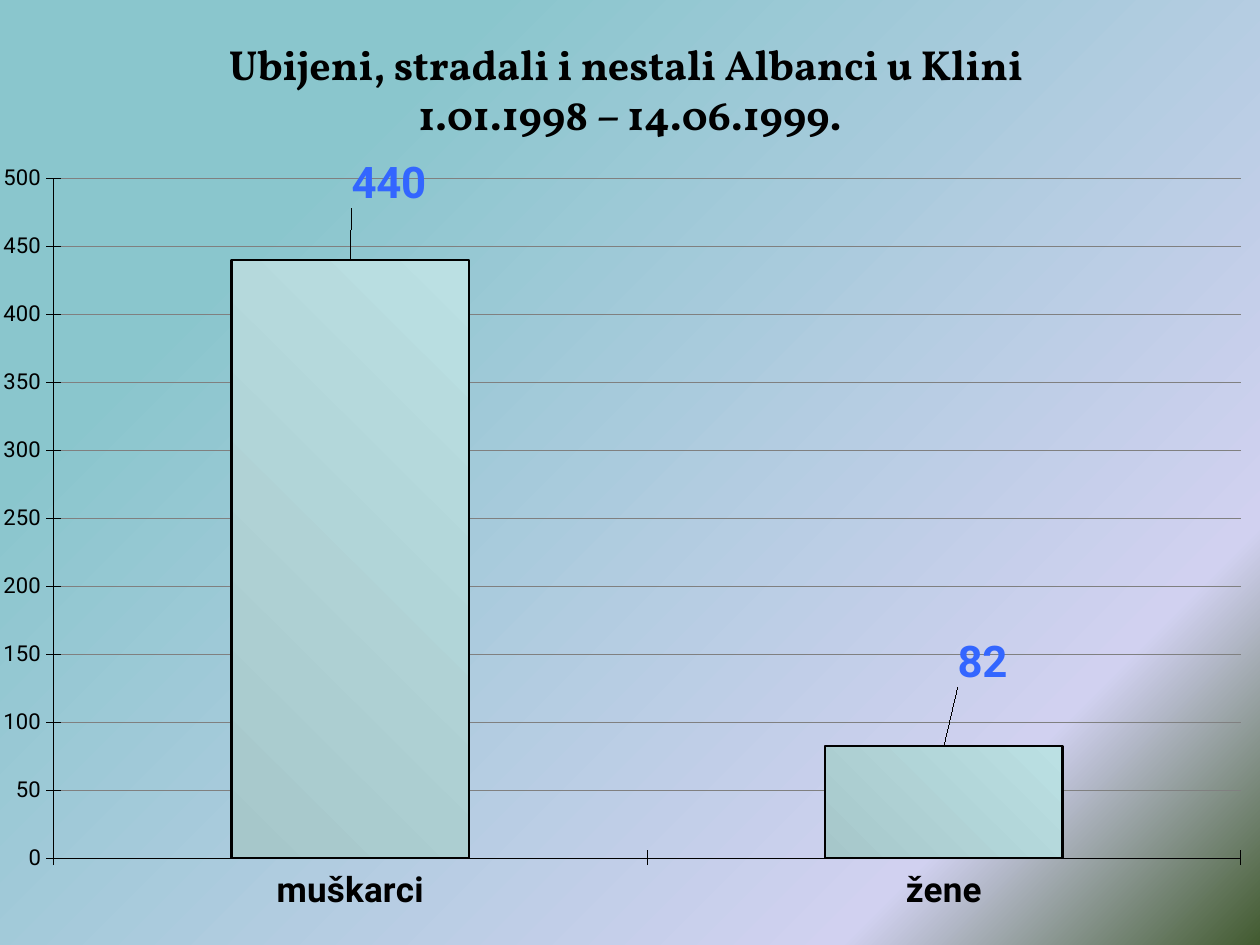
"""Build the slide with a column chart of victims in Klina by sex."""
from dataclasses import dataclass

from lxml import etree
from pptx import Presentation
from pptx.chart.data import CategoryChartData
from pptx.dml.color import RGBColor
from pptx.enum.chart import XL_CHART_TYPE, XL_LABEL_POSITION, XL_TICK_LABEL_POSITION, XL_TICK_MARK
from pptx.enum.text import MSO_ANCHOR, MSO_AUTO_SIZE, PP_ALIGN
from pptx.oxml.ns import qn
from pptx.util import Cm, Pt

COLUMNS = XL_CHART_TYPE.COLUMN_CLUSTERED
OUTSIDE_END = XL_LABEL_POSITION.OUTSIDE_END
LOW = XL_TICK_LABEL_POSITION.LOW
CROSS = XL_TICK_MARK.CROSS
TOP = MSO_ANCHOR.TOP
NO_FIT = MSO_AUTO_SIZE.NONE
CENTER = PP_ALIGN.CENTER

COLORS = {
    "text": "000000",
    "label": "3366FF",
    "grid": "808080",
    "teal": "8AC6CD",
    "lilac": "D1D1F0",
    "green": "425B30",
    "bar dark": "A6C7CA",
    "bar light": "BBE0E3",
}
CHART_FONT = "Roboto"
TITLE_FONT = "Vollkorn"
TITLE_LINES = ("Ubijeni, stradali i nestali Albanci u Klini ", "1.01.1998 – 14.06.1999.")


@dataclass(frozen=True)
class Column:
    category: str
    value: int
    label_shift: tuple[float, float]


@dataclass(frozen=True)
class Stop:
    percent: int
    color: str


GROUPS = (
    Column("muškarci", 440, (0.03, -0.06)),
    Column("žene", 82, (0.03, -0.07)),
)
PAGE_STOPS = (Stop(22, "teal"), Stop(81, "lilac"), Stop(100, "green"))
BAR_STOPS = (Stop(0, "bar dark"), Stop(100, "bar light"))


def color(name: str) -> RGBColor:
    """Return a palette colour."""
    return RGBColor.from_string(COLORS[name])


def style_font(font, size: float, bold: bool, name: str = CHART_FONT, tint: str = "text") -> None:
    """Set face, size, weight and colour of a font."""
    font.name, font.size, font.bold = name, Pt(size), bold
    font.color.rgb = color(tint)


def style_line(line, tint: str, width: float) -> None:
    """Set colour and width of a line."""
    line.color.rgb = color(tint)
    line.width = Pt(width)


def fill_gradient(fill, owner, stops: tuple[Stop, ...], angle: int) -> None:
    """Give a fill a linear gradient at a counter-clockwise angle."""
    fill.gradient()
    fill.gradient_angle = angle
    stop_list = owner.find(".//" + qn("a:gsLst"))
    for old in list(stop_list):
        stop_list.remove(old)
    for stop in stops:
        node = etree.SubElement(stop_list, qn("a:gs"), pos=str(stop.percent * 1000))
        etree.SubElement(node, qn("a:srgbClr"), val=COLORS[stop.color])


def place(parent, index: int, **settings) -> None:
    """Put a manual layout into a chart element."""
    for old in parent.findall(qn("c:layout")):
        parent.remove(old)
    layout = etree.Element(qn("c:layout"))
    manual = etree.SubElement(layout, qn("c:manualLayout"))
    for tag, value in settings.items():
        etree.SubElement(manual, qn("c:" + tag), val=str(value))
    parent.insert(index, layout)


def style_axis(axis, size: float, bold: bool) -> None:
    """Format the line, ticks and labels of an axis."""
    axis.major_tick_mark = CROSS
    style_line(axis.format.line, "text", 0.31)
    style_font(axis.tick_labels.font, size, bold)


def add_title(page) -> None:
    """Fill the title placeholder."""
    title = page.shapes.title
    title.left, title.top, title.width, title.height = Cm(0), Cm(0.64), Cm(25.4), Cm(3.18)
    frame = title.text_frame
    frame.word_wrap = True
    frame.auto_size = NO_FIT
    frame.vertical_anchor = TOP
    para = frame.paragraphs[0]
    para.alignment = CENTER
    for number, line in enumerate(TITLE_LINES):
        if number:
            para.add_line_break()
        span = para.add_run()
        span.text = line
        style_font(span.font, 24, True, TITLE_FONT)


def add_columns(page) -> None:
    """Add the column chart behind the title."""
    data = CategoryChartData()
    data.categories = [group.category for group in GROUPS]
    data.add_series("Series 1", [group.value for group in GROUPS])
    frame = page.shapes.add_chart(COLUMNS, Cm(-0.53), Cm(3.18), Cm(25.93), Cm(15.57), data)
    page.shapes.title.element.addprevious(frame.element)
    chart = frame.chart
    chart.has_title = chart.has_legend = False
    style_font(chart.font, 23.3, True)
    place(chart.element.find(".//" + qn("c:plotArea")), 0, layoutTarget="inner",
          xMode="edge", yMode="edge", x=0.062, y=0.021, w=0.923, h=0.885)

    style_axis(chart.category_axis, 20, True)
    chart.category_axis.tick_label_position = LOW
    values = chart.value_axis
    style_axis(values, 12.6, False)
    values.minimum_scale, values.maximum_scale, values.major_unit = 0, 500, 50
    style_line(values.major_gridlines.format.line, "grid", 0.31)

    plot = chart.plots[0]
    plot.gap_width = 150
    plot.vary_by_categories = False
    series = plot.series[0]
    fill_gradient(series.format.fill, chart.element, BAR_STOPS, 45)
    style_line(series.format.line, "text", 1.25)
    series.data_labels.show_value = True
    style_font(series.data_labels.font, 25, True, tint="label")
    for number, group in enumerate(GROUPS):
        label = series.points[number].data_label
        style_font(label.font, 25, True, tint="label")
        label.position = OUTSIDE_END
        shift_x, shift_y = group.label_shift
        node = chart.element.findall(".//" + qn("c:dLbl"))[number]
        place(node, 1, x=shift_x, y=shift_y)


def main() -> None:
    """Build and save the deck."""
    deck = Presentation()
    deck.slide_width, deck.slide_height = Cm(25.4), Cm(19.05)
    page = deck.slides.add_slide(deck.slide_layouts[5])
    fill_gradient(page.background.fill, page.element, PAGE_STOPS, 315)
    add_title(page)
    add_columns(page)
    deck.save("out.pptx")


if __name__ == "__main__":
    main()
